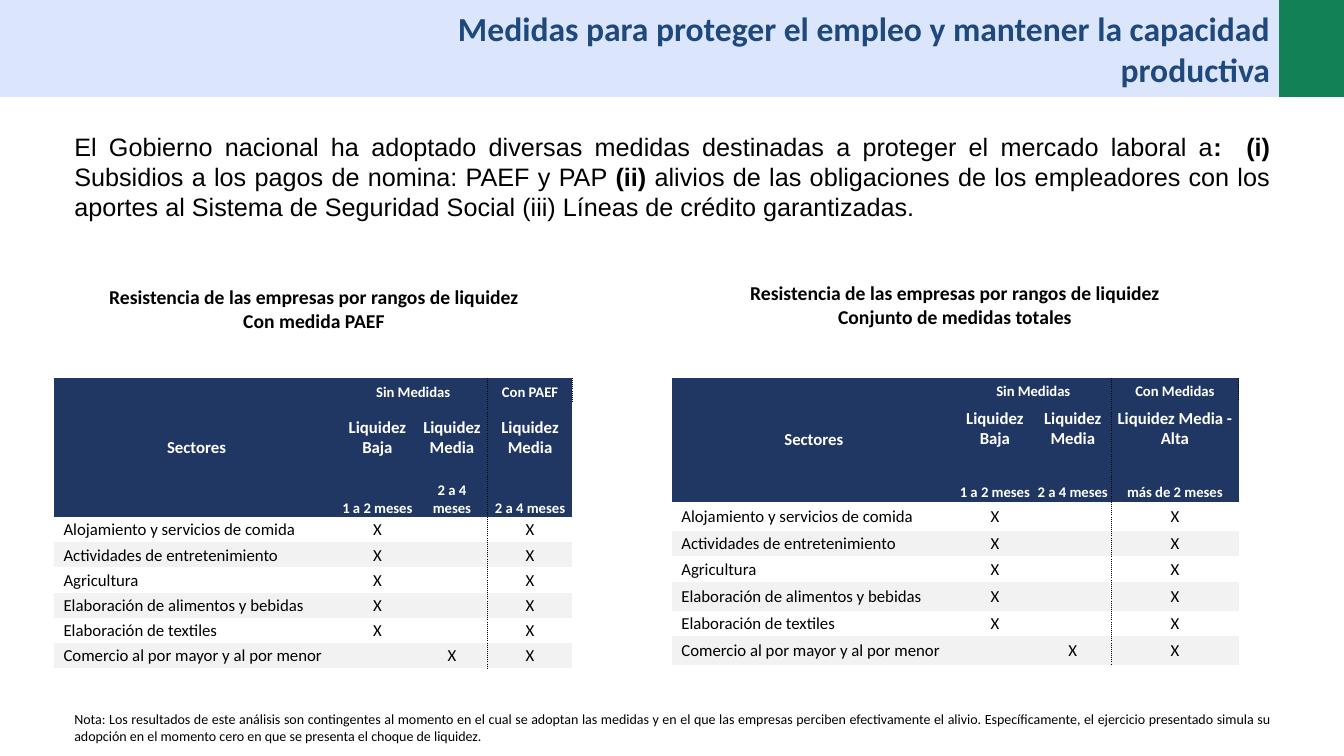
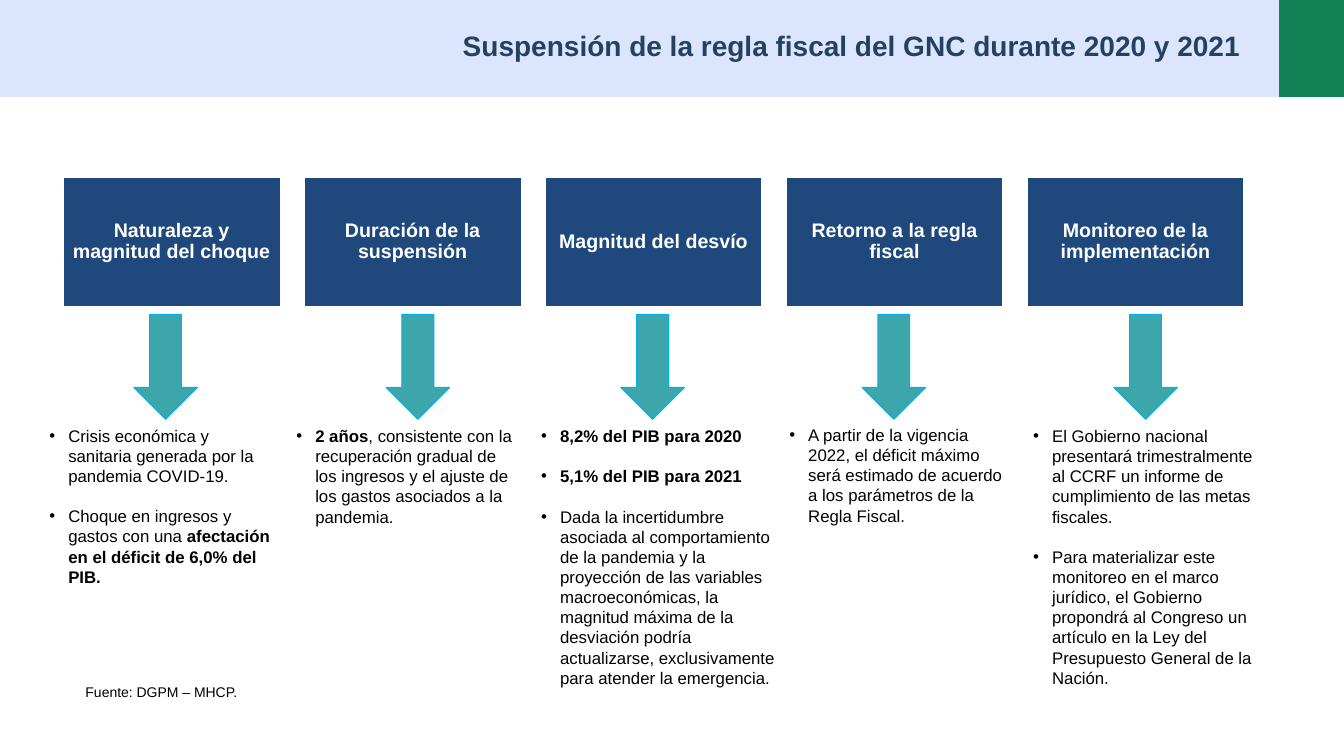
from copy import deepcopy
from dataclasses import dataclass, field

from lxml import etree
from pptx import Presentation
from pptx.dml.color import RGBColor
from pptx.enum.shapes import MSO_SHAPE
from pptx.enum.text import MSO_ANCHOR, MSO_AUTO_SIZE, PP_ALIGN
from pptx.oxml.ns import qn
from pptx.util import Pt

RECTANGLE, DOWN_ARROW = MSO_SHAPE.RECTANGLE, MSO_SHAPE.DOWN_ARROW
TOP, MIDDLE, BOTTOM = MSO_ANCHOR.TOP, MSO_ANCHOR.MIDDLE, MSO_ANCHOR.BOTTOM
LEFT, CENTER, RIGHT, JUSTIFY = PP_ALIGN.LEFT, PP_ALIGN.CENTER, PP_ALIGN.RIGHT, PP_ALIGN.JUSTIFY
NO_AUTOFIT = MSO_AUTO_SIZE.NONE

BLACK = RGBColor(0x00, 0x00, 0x00)
WHITE = RGBColor(0xFF, 0xFF, 0xFF)
GREEN = RGBColor(0x13, 0x81, 0x56)
PALE_BLUE = RGBColor(0xDB, 0xE6, 0xFC)
BLUE = RGBColor(0x1F, 0x49, 0x7D)
SLATE = RGBColor(0x25, 0x40, 0x61)
NAVY = RGBColor(0x20, 0x37, 0x64)
GREY = RGBColor(0xF2, 0xF2, 0xF2)
TEAL = RGBColor(0x3D, 0xA6, 0xAB)
SKY = RGBColor(0x00, 0xB0, 0xF0)

PLAIN_TABLE_STYLE = "{2D5ABB26-0587-4C30-8999-92F81FD0307C}"
SLIDE_WIDTH, SLIDE_HEIGHT = 960, 540
BAND_WIDTH, BAND_HEIGHT = 913.7, 69.2
INSETS = (7.2, 3.6, 7.2, 3.6)
CELL_INSETS = (0.72, 0.72, 0.72, 0)
SECTOR_INSETS = (6.5, 0.72, 0.72, 0)
LIST_GAP = 14.4
LIST_INDENT = 13.5


@dataclass(frozen=True)
class Area:
    left: float
    top: float
    width: float
    height: float


@dataclass(frozen=True)
class Span:
    text: str
    bold: bool = False


@dataclass(frozen=True)
class Style:
    size: float
    name: str = "Calibri"
    color: RGBColor = BLACK
    bold: bool = False
    align: PP_ALIGN = LEFT
    anchor: MSO_ANCHOR = TOP
    insets: tuple = INSETS
    spacing: float = 1.0
    gap: float = 0
    bullet: bool = False


@dataclass(frozen=True)
class LiquidityTable:
    area: Area
    widths: tuple
    heights: tuple
    caption_area: Area
    caption: str
    measure: str
    level: str
    periods: tuple = field(default=())


@dataclass(frozen=True)
class Pillar:
    heading: str
    arrow_left: float
    list_area: Area
    items: tuple


SECTORS = (
    ("Alojamiento y servicios de comida", 1),
    ("Actividades de entretenimiento", 1),
    ("Agricultura", 1),
    ("Elaboración de alimentos y bebidas", 1),
    ("Elaboración de textiles", 1),
    ("Comercio al por mayor y al por menor", 2),
)

TABLES = (
    LiquidityTable(
        Area(38.9, 270, 370.1, 206.6), (203, 55.4, 51.1, 60.6),
        (16.6, 51.8, 31) + (18,) * 6, Area(51.1, 200.2, 346.3, 41),
        "Con medida PAEF", "Con PAEF", "Liquidez Media",
        ("1 a 2 meses", "2 a 4 meses", "2 a 4 meses")),
    LiquidityTable(
        Area(480.2, 270, 404.6, 206), (202.3, 56.4, 54.9, 91),
        (15.8, 40.5, 32, 20.8, 18.2, 18.2, 20.8, 18.2, 20.8),
        Area(509, 197.3, 346.3, 41),
        "Conjunto de medidas totales", "Con Medidas", "Liquidez Media - Alta",
        ("1 a 2 meses", "2 a 4 meses", "más de 2 meses")),
)

PILLARS = (
    Pillar("Naturaleza y magnitud del choque", 95.6, Area(28.1, 300.2, 175, 123.8), (
        [Span("Crisis económica y sanitaria generada por la pandemia COVID-19.")],
        [Span("Choque en ingresos y gastos con una "),
         Span("afectación en el déficit de 6,0% del PIB.", True)])),
    Pillar("Duración de la suspensión", 275.8, Area(204.5, 300.4, 175, 79.9), (
        [Span("2 años", True),
         Span(", consistente con la recuperación gradual de los ingresos y el ajuste "
              "de los gastos asociados a la pandemia.")],)),
    Pillar("Magnitud del desvío", 443.5, Area(379.4, 300.4, 185.8, 196.6), (
        [Span("8,2% del PIB para 2020", True)],
        [Span("5,1% del PIB para 2021", True)],
        [Span("Dada la incertidumbre asociada al comportamiento de la pandemia y la "
              "proyección de las variables macroeconómicas, la magnitud máxima de la "
              "desviación podría actualizarse, exclusivamente para atender la emergencia.")])),
    Pillar("Retorno a la regla fiscal", 615.8, Area(556.6, 299.7, 175, 79.9), (
        [Span("A partir de la vigencia 2022, el déficit máximo será estimado de acuerdo "
              "a los parámetros de la Regla Fiscal.")],)),
    Pillar("Monitoreo de la implementación", 795.6, Area(730.8, 300.4, 175, 196.6), (
        [Span("El Gobierno nacional presentará trimestralmente al CCRF un informe de "
              "cumplimiento de las metas fiscales.")],
        [Span("Para materializar este monitoreo en el marco jurídico, el Gobierno "
              "propondrá al Congreso un artículo en la Ley del Presupuesto General "
              "de la Nación.")])),
)


def set_values(target, values: dict) -> None:
    for name, value in values.items():
        setattr(target, name, value)


def set_margins(target, insets: tuple) -> None:
    sides = ("margin_left", "margin_top", "margin_right", "margin_bottom")
    set_values(target, {side: Pt(inset) for side, inset in zip(sides, insets)})


def place(shape, area: Area) -> None:
    set_values(shape, {name: Pt(getattr(area, name)) for name in ("left", "top", "width", "height")})


def add_bullet(para) -> None:
    properties = para._p.get_or_add_pPr()
    properties.set("marL", str(Pt(LIST_INDENT)))
    properties.set("indent", str(-Pt(LIST_INDENT)))
    etree.SubElement(properties, qn("a:buFont")).set("typeface", "Arial")
    etree.SubElement(properties, qn("a:buChar")).set("char", "•")


def write(frame, paragraphs, style: Style) -> None:
    for index, spans in enumerate(paragraphs):
        para = frame.paragraphs[0] if index == 0 else frame.add_paragraph()
        set_values(para, {
            "alignment": style.align, "line_spacing": style.spacing,
            "space_before": Pt(style.gap if index else 0), "space_after": Pt(0)})
        if style.bullet:
            add_bullet(para)
        for span in spans:
            run = para.add_run()
            run.text = span.text
            set_values(run.font, {"name": style.name, "size": Pt(style.size),
                                  "bold": style.bold or span.bold})
            run.font.color.rgb = style.color


def fill_text(shape, paragraphs, style: Style) -> None:
    frame = shape.text_frame
    set_values(frame, {"word_wrap": True, "auto_size": NO_AUTOFIT, "vertical_anchor": style.anchor})
    set_margins(frame, style.insets)
    write(frame, paragraphs, style)


def add_text(slide, area: Area, paragraphs, style: Style) -> None:
    box = slide.shapes.add_textbox(Pt(0), Pt(0), Pt(0), Pt(0))
    place(box, area)
    fill_text(box, paragraphs, style)


def add_title(slide, area: Area, text: str, style: Style) -> None:
    place(slide.shapes.title, area)
    fill_text(slide.shapes.title, [[Span(text)]], style)


def add_block(slide, kind, area: Area, fill: RGBColor, line: RGBColor | None = None, weight: float = 0):
    block = slide.shapes.add_shape(kind, Pt(0), Pt(0), Pt(0), Pt(0))
    place(block, area)
    block.shadow.inherit = False
    block.fill.solid()
    block.fill.fore_color.rgb = fill
    if line is None:
        block.line.fill.background()
    else:
        block.line.color.rgb = line
        block.line.width = Pt(weight)
    return block


def add_master_bands(deck, slide) -> None:
    bands = ((Area(BAND_WIDTH, 0, SLIDE_WIDTH - BAND_WIDTH, BAND_HEIGHT), GREEN),
             (Area(0, 0, BAND_WIDTH, BAND_HEIGHT), PALE_BLUE))
    for area, color in bands:
        band = add_block(slide, RECTANGLE, area, color)
        deck.slide_master.shapes.element.insert(2, band.element)


def add_list_placeholders(layout, count: int) -> None:
    body = layout.placeholders[1].element
    for number in range(1, count):
        clone = deepcopy(body)
        clone.ph.idx = 20 + number
        label = clone.find(".//" + qn("p:cNvPr"))
        label.set("id", str(20 + number))
        label.set("name", f"List Placeholder {number + 1}")
        layout.shapes.element.append(clone)


def add_dotted_border(cell, side: str) -> None:
    line = etree.Element(qn(f"a:{side}"), w=str(Pt(0.5)))
    fill = etree.SubElement(line, qn("a:solidFill"))
    etree.SubElement(fill, qn("a:srgbClr")).set("val", str(BLACK))
    etree.SubElement(line, qn("a:prstDash")).set("val", "dot")
    cell._tc.get_or_add_tcPr().insert(0, line)


def format_cell(cell, text: str, row: int, column: int) -> None:
    header = row < 3
    sector = column == 0 and not header
    if header or row % 2 == 0:
        cell.fill.solid()
        cell.fill.fore_color.rgb = NAVY if header else GREY
    else:
        cell.fill.background()
    small = column > 0 and row in (0, 2)
    style = Style(10.5 if small else 12, color=WHITE if header else BLACK, bold=header,
                  align=LEFT if sector else CENTER)
    cell.vertical_anchor = BOTTOM if small else MIDDLE
    set_margins(cell, SECTOR_INSETS if sector else CELL_INSETS)
    if text:
        write(cell.text_frame, [[Span(text)]], style)
    else:
        end = etree.SubElement(cell.text_frame.paragraphs[0]._p, qn("a:endParaRPr"))
        end.set("sz", "1000")
    if column in (2, 3):
        add_dotted_border(cell, "lnR" if column == 2 else "lnL")


def add_liquidity_table(slide, spec_data: LiquidityTable) -> None:
    rows = [("Sectores", "Sin Medidas", "", spec_data.measure),
            ("", "Liquidez Baja", "Liquidez Media", spec_data.level),
            ("", *spec_data.periods)]
    rows += [(sector, *("X" if column in (mark, 3) else "" for column in (1, 2, 3)))
             for sector, mark in SECTORS]
    frame = slide.shapes.add_table(len(rows), 4, Pt(0), Pt(0), Pt(0), Pt(0))
    place(frame, spec_data.area)
    table = frame.table
    set_values(table, {"first_row": False, "horz_banding": False})
    frame.element.find(".//" + qn("a:tableStyleId")).text = PLAIN_TABLE_STYLE
    for column, width in zip(table.columns, spec_data.widths):
        column.width = Pt(width)
    for row, height in zip(table.rows, spec_data.heights):
        row.height = Pt(height)
    for row_index, texts in enumerate(rows):
        for column_index, text in enumerate(texts):
            format_cell(table.cell(row_index, column_index), text, row_index, column_index)
    table.cell(0, 0).merge(table.cell(2, 0))
    table.cell(0, 1).merge(table.cell(0, 2))
    add_dotted_border(table.cell(0, 1), "lnR")


def build_measures(slide) -> None:
    add_title(slide, Area(275.8, 2.2, 638.6, 65.5),
              "Medidas para proteger el empleo y mantener la capacidad productiva",
              Style(24, color=BLUE, bold=True, align=RIGHT))
    add_text(slide, Area(46, 90, 868.3, 72.7), [[
        Span("El Gobierno nacional ha adoptado diversas medidas destinadas a proteger el mercado laboral a"),
        Span(":  (i) ", True), Span("Subsidios a los pagos de nomina: PAEF y PAP "), Span("(ii)", True),
        Span(" alivios de las obligaciones de los empleadores con los aportes al Sistema de "
             "Seguridad Social (iii) Líneas de crédito garantizadas.")]],
        Style(18, "Arial", align=JUSTIFY))
    add_text(slide, Area(46, 504, 868.3, 31.7), [[Span(
        "Nota: Los resultados de este análisis son contingentes al momento en el cual se adoptan "
        "las medidas y en el que las empresas perciben efectivamente el alivio. Específicamente, "
        "el ejercicio presentado simula su adopción en el momento cero en que se presenta el "
        "choque de liquidez.")]], Style(10, align=JUSTIFY))
    for table in TABLES:
        add_liquidity_table(slide, table)
        add_text(slide, table.caption_area,
                 [[Span("Resistencia de las empresas por rangos de liquidez")], [Span(table.caption)]],
                 Style(14, bold=True, align=CENTER))


def build_fiscal_rule(slide) -> None:
    add_title(slide, Area(309.6, 16.6, 580.3, 31.7),
              "Suspensión de la regla fiscal del GNC durante 2020 y 2021",
              Style(20, "Arial", SLATE, True, RIGHT, insets=(3.6,) * 4))
    heading_style = Style(14, "Arial", WHITE, True, CENTER, MIDDLE, (4.3,) * 4, 0.9)
    list_style = Style(12, "Arial", gap=LIST_GAP, bullet=True)
    bodies = [holder for holder in slide.placeholders if holder.placeholder_format.idx > 0]
    for index, (pillar, body) in enumerate(zip(PILLARS, bodies)):
        box = add_block(slide, RECTANGLE, Area(44.6 + 172.1 * index, 126, 156.2, 93.6), BLUE, WHITE, 2)
        fill_text(box, [[Span(pillar.heading)]], heading_style)
        add_block(slide, DOWN_ARROW, Area(pillar.arrow_left, 224.6, 45.4, 74.9), TEAL, SKY, 0.75)
        place(body, pillar.list_area)
        fill_text(body, pillar.items, list_style)
    add_text(slide, Area(54, 483.1, 125.3, 20.2), [[Span("Fuente: DGPM – MHCP.")]],
             Style(10, "Arial", spacing=1.15))


def main() -> None:
    deck = Presentation()
    set_values(deck, {"slide_width": Pt(SLIDE_WIDTH), "slide_height": Pt(SLIDE_HEIGHT)})
    list_layout, title_layout = deck.slide_layouts[1], deck.slide_layouts[5]
    add_list_placeholders(list_layout, len(PILLARS))
    measures = deck.slides.add_slide(title_layout)
    add_master_bands(deck, measures)
    build_measures(measures)
    build_fiscal_rule(deck.slides.add_slide(list_layout))
    deck.save("out.pptx")


if __name__ == "__main__":
    main()
